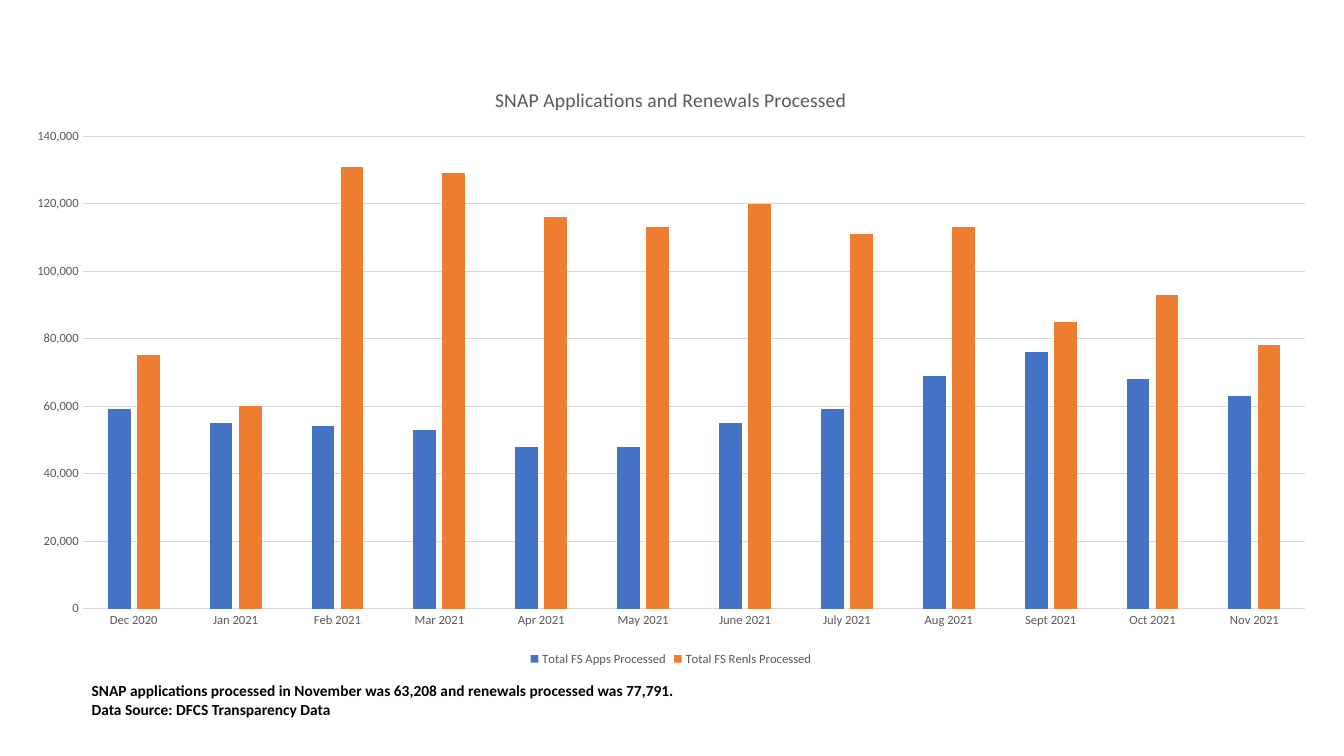
from lxml import etree
from pptx import Presentation
from pptx import util as u
from pptx.chart.data import CategoryChartData
from pptx.dml.color import RGBColor
from pptx.enum import chart as ch, text
from pptx.oxml import ns

MONTHS = ["Dec 2020", "Jan 2021", "Feb 2021", "Mar 2021", "Apr 2021", "May 2021",
          "June 2021", "July 2021", "Aug 2021", "Sept 2021", "Oct 2021", "Nov 2021"]
PROCESSED = {  # series name: (colour, thousands per month)
    "Total FS Apps Processed":
        ("4472C4", [59, 55, 54, 53, 48, 48, 55, 59, 69, 76, 68, 63]),
    "Total FS Renls Processed":
        ("ED7D31", [75, 60, 131, 129, 116, 113, 120, 111, 113, 85, 93, 78]),
}


def colour(hex_value):
    return RGBColor.from_string(hex_value)


class SlideBuilder:
    FONT = "Calibri"
    GREY = "595959"
    GRID = "D9D9D9"

    def __init__(self, slide):
        self.slide = slide

    def style(self, font, size, hex_value, bold=False):
        font.name = self.FONT
        font.size = u.Pt(size)
        font.bold = bold
        font.color.rgb = colour(hex_value)

    def rule(self, line):
        line.color.rgb = colour(self.GRID)
        line.width = u.Pt(0.75)

    def note(self, box, lines):
        frame = self.slide.shapes.add_textbox(*map(u.Inches, box)).text_frame
        frame.word_wrap = True
        frame.auto_size = text.MSO_AUTO_SIZE.SHAPE_TO_FIT_TEXT
        frame.text = "\n".join(lines)
        for paragraph in frame.paragraphs:
            self.style(paragraph.font, 11, "000000", bold=True)

    def place_plot(self, chart, **fractions):
        """Fix the inner plot area as fractions of the chart."""
        plot_area = chart.plots[0]._element.getparent()
        for old in plot_area.findall(ns.qn("c:layout")):
            plot_area.remove(old)
        layout = etree.Element(ns.qn("c:layout"))
        manual = etree.SubElement(layout, ns.qn("c:manualLayout"))
        settings = {"layoutTarget": "inner", "xMode": "edge", "yMode": "edge", **fractions}
        for tag, value in settings.items():
            etree.SubElement(manual, ns.qn(f"c:{tag}")).set("val", str(value))
        plot_area.insert(0, layout)

    def column_chart(self, box, title, months, processed):
        data = CategoryChartData(number_format="#,##0")
        data.categories = months
        for name, (_, thousands) in processed.items():
            data.add_series(name, [1000 * value for value in thousands])
        chart = self.slide.shapes.add_chart(
            ch.XL_CHART_TYPE.COLUMN_CLUSTERED, *map(u.Inches, box), data).chart
        self.style(chart.font, 10, "000000")

        # Title and legend
        chart.has_title = True
        heading = chart.chart_title.text_frame
        heading.text = title
        self.style(heading.paragraphs[0].font, 14, self.GREY)
        chart.chart_title.include_in_layout = False
        chart.has_legend = True
        chart.legend.position = ch.XL_LEGEND_POSITION.BOTTOM
        chart.legend.include_in_layout = False
        self.style(chart.legend.font, 9, self.GREY)

        # Axes
        month_axis, count_axis = chart.category_axis, chart.value_axis
        for axis in (month_axis, count_axis):
            axis.major_tick_mark = axis.minor_tick_mark = ch.XL_TICK_MARK.NONE
            self.style(axis.tick_labels.font, 9, self.GREY)
        self.rule(month_axis.format.line)
        self.rule(count_axis.major_gridlines.format.line)
        count_axis.format.line.fill.background()
        count_axis.minimum_scale, count_axis.maximum_scale = 0, 140000
        count_axis.major_unit = 20000
        count_axis.tick_labels.number_format = "#,##0"
        count_axis.tick_labels.number_format_is_linked = False

        # Columns
        plot = chart.plots[0]
        plot.gap_width, plot.overlap = 219, -27
        plot.vary_by_categories = False
        for series in plot.series:
            series.format.fill.solid()
            series.format.fill.fore_color.rgb = colour(processed[series.name][0])
            series.invert_if_negative = False
        self.place_plot(chart, x=0.055, y=0.117, w=0.925, h=0.781)


def main():
    deck = Presentation()
    deck.slide_width, deck.slide_height = u.Inches(13.33), u.Inches(7.5)
    builder = SlideBuilder(deck.slides.add_slide(deck.slide_layouts[6]))

    # Takeaway and source
    builder.note((0.81, 6.71, 12.52, 0.47), [
        "SNAP applications processed in November was 63,208 "
        "and renewals processed was 77,791.",
        "Data Source: DFCS Transparency Data"])

    # Monthly volumes
    builder.column_chart((0.1, 0.65, 13.11, 6), "SNAP Applications and Renewals Processed",
                         MONTHS, PROCESSED)
    deck.save("out.pptx")


if __name__ == "__main__":
    main()
